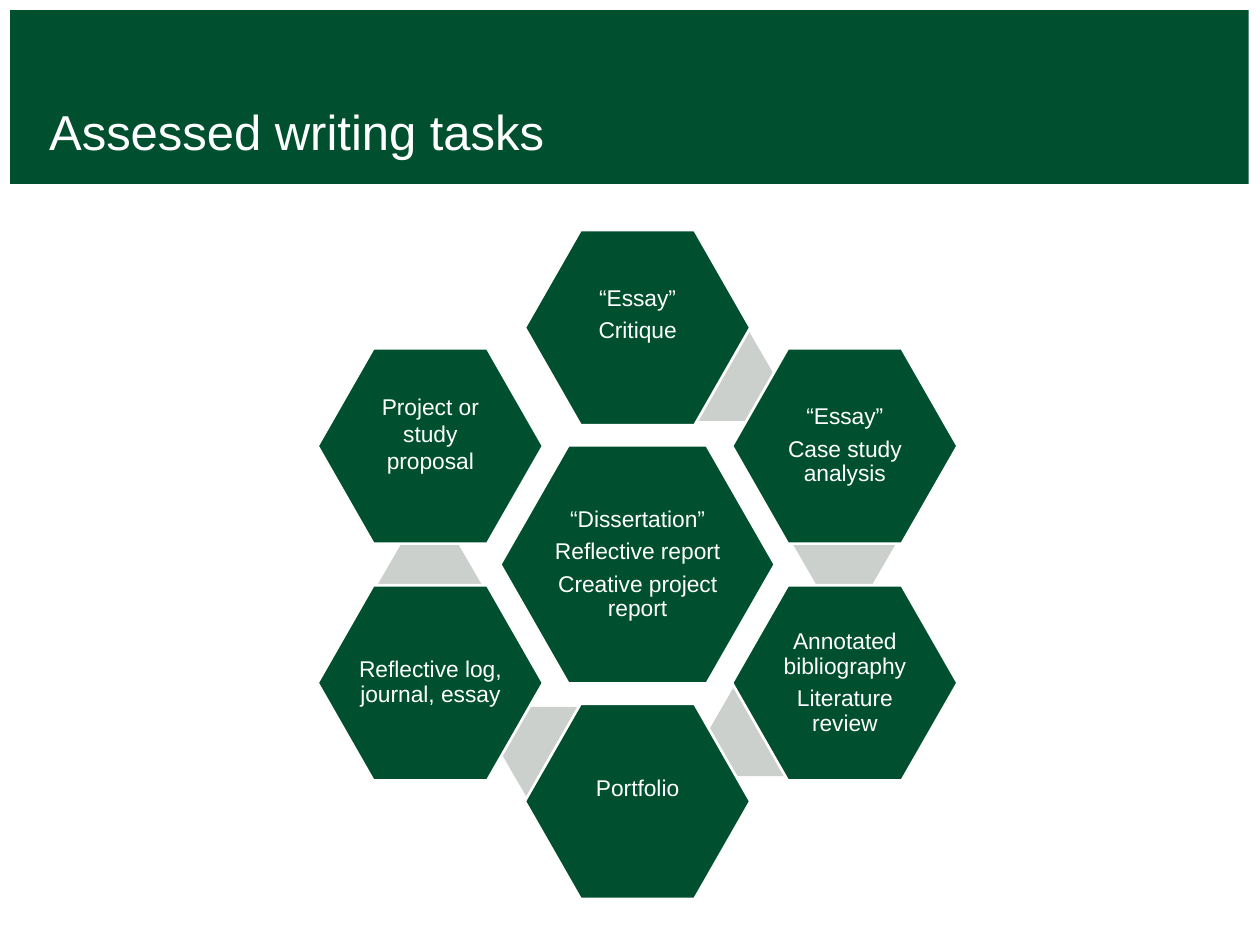
from dataclasses import dataclass

from pptx import Presentation
from pptx.dml.color import RGBColor
from pptx.enum.shapes import MSO_SHAPE as Preset
from pptx.enum.text import MSO_ANCHOR as Anchor, PP_ALIGN as Align
from pptx.util import Inches, Pt

GREEN = RGBColor(0x00, 0x50, 0x2F)
GREY = RGBColor(0xCC, 0xD0, 0xCD)
WHITE = RGBColor(0xFF, 0xFF, 0xFF)
FONT = "Arial"

CENTRE_X, CENTRE_Y = 5.06, 4.48
COLUMN_STEP, ROW_STEP = 1.645, 0.94
CORE_SIZE = (2.18, 1.89)
TASK_SIZE = (1.79, 1.55)
ACCENT_SIZE = (0.82, 0.71)
INSET = 0.02
LIFT = 0.2


@dataclass
class Task:
    column: int
    row: int
    lines: tuple[str, ...]
    lift: float = 0
    spacing: float = 0.9
    size: tuple[float, float] = TASK_SIZE


TASKS = [
    Task(0, 0, ("“Dissertation”", "Reflective report", "Creative project report"), size=CORE_SIZE),
    Task(0, -2, ("“Essay”", "Critique"), LIFT),
    Task(1, -1, ("“Essay”", "Case study analysis")),
    Task(1, 1, ("Annotated bibliography", "Literature review")),
    Task(0, 2, ("Portfolio",), LIFT),
    Task(-1, 1, ("Reflective log, journal, essay",)),
    Task(-1, -1, ("Project or study proposal",), LIFT, 1.0),
]

ACCENT_CENTRES = [(5.74, 2.985), (6.7, 4.315), (6.03, 5.805), (4.38, 5.965), (3.41, 4.635)]


def add_filled(page, preset, left: float, top: float, size: tuple[float, float], colour: RGBColor):
    shape = page.shapes.add_shape(preset, Inches(left), Inches(top), *map(Inches, size))
    shape.shadow.inherit = False
    shape.fill.solid()
    shape.fill.fore_color.rgb = colour
    shape.line.fill.background()
    return shape


def add_hexagon(page, x: float, y: float, size: tuple[float, float], colour: RGBColor, adjust: float):
    width, height = size
    shape = add_filled(page, Preset.HEXAGON, x - width / 2, y - height / 2, size, colour)
    shape.adjustments[0] = adjust
    return shape


def format_font(font, size: float) -> None:
    font.name = FONT
    font.size = Pt(size)
    font.color.rgb = WHITE


def add_task(page, task: Task) -> None:
    x = CENTRE_X + task.column * COLUMN_STEP
    y = CENTRE_Y + task.row * ROW_STEP
    shape = add_hexagon(page, x, y, task.size, GREEN, 0.286)
    shape.line.color.rgb = WHITE
    shape.line.width = Pt(1.5)
    frame = shape.text_frame
    frame.word_wrap = True
    frame.vertical_anchor = Anchor.MIDDLE
    frame.margin_left = frame.margin_right = frame.margin_top = Inches(INSET)
    frame.margin_bottom = Inches(INSET + task.lift)
    frame.text = "\n".join(task.lines)
    for para in frame.paragraphs:
        para.alignment = Align.CENTER
        para.line_spacing = task.spacing
        para.space_after = Pt(4.5)
        for span in para.runs:
            format_font(span.font, 13)


def add_heading(page) -> None:
    band = add_filled(page, Preset.RECTANGLE, 0.08, 0.08, (9.83, 1.38), GREEN)
    title = page.shapes.title
    title._element.addprevious(band._element)
    title.left, title.top = Inches(0.39), Inches(0.46)
    title.width, title.height = Inches(5.33), Inches(0.81)
    frame = title.text_frame
    frame.text = "Assessed writing tasks"
    frame.word_wrap = True
    frame.vertical_anchor = Anchor.BOTTOM
    frame.margin_left = frame.margin_right = frame.margin_top = frame.margin_bottom = 0
    para = frame.paragraphs[0]
    para.alignment = Align.LEFT
    format_font(para.runs[0].font, 28)


def main() -> None:
    deck = Presentation()
    deck.slide_width, deck.slide_height = Inches(10), Inches(7.5)
    page = deck.slides.add_slide(deck.slide_layouts[5])
    add_heading(page)
    for x, y in ACCENT_CENTRES:
        add_hexagon(page, x, y, ACCENT_SIZE, GREY, 0.289)
    for task in TASKS:
        add_task(page, task)
    deck.save("out.pptx")


if __name__ == "__main__":
    main()
